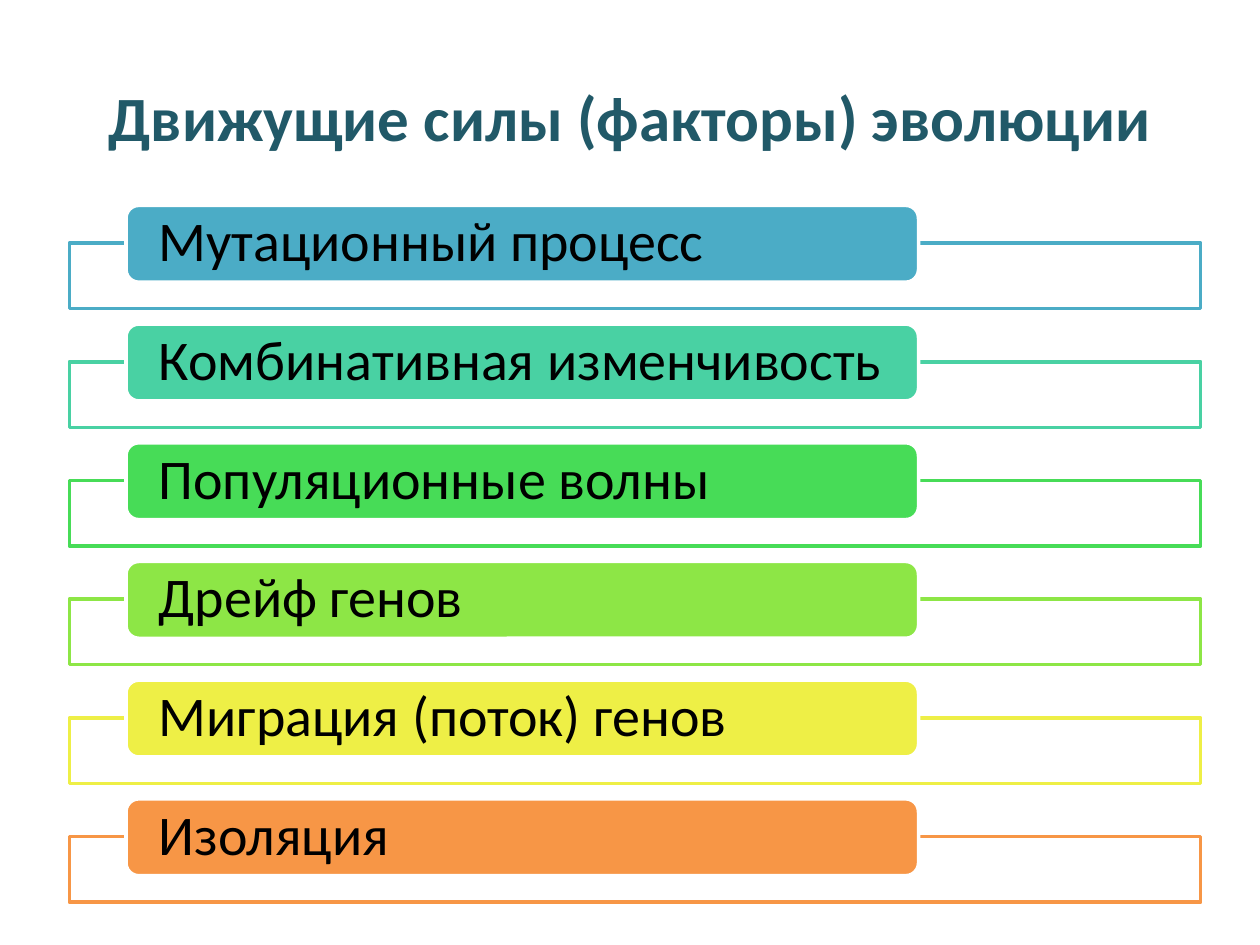
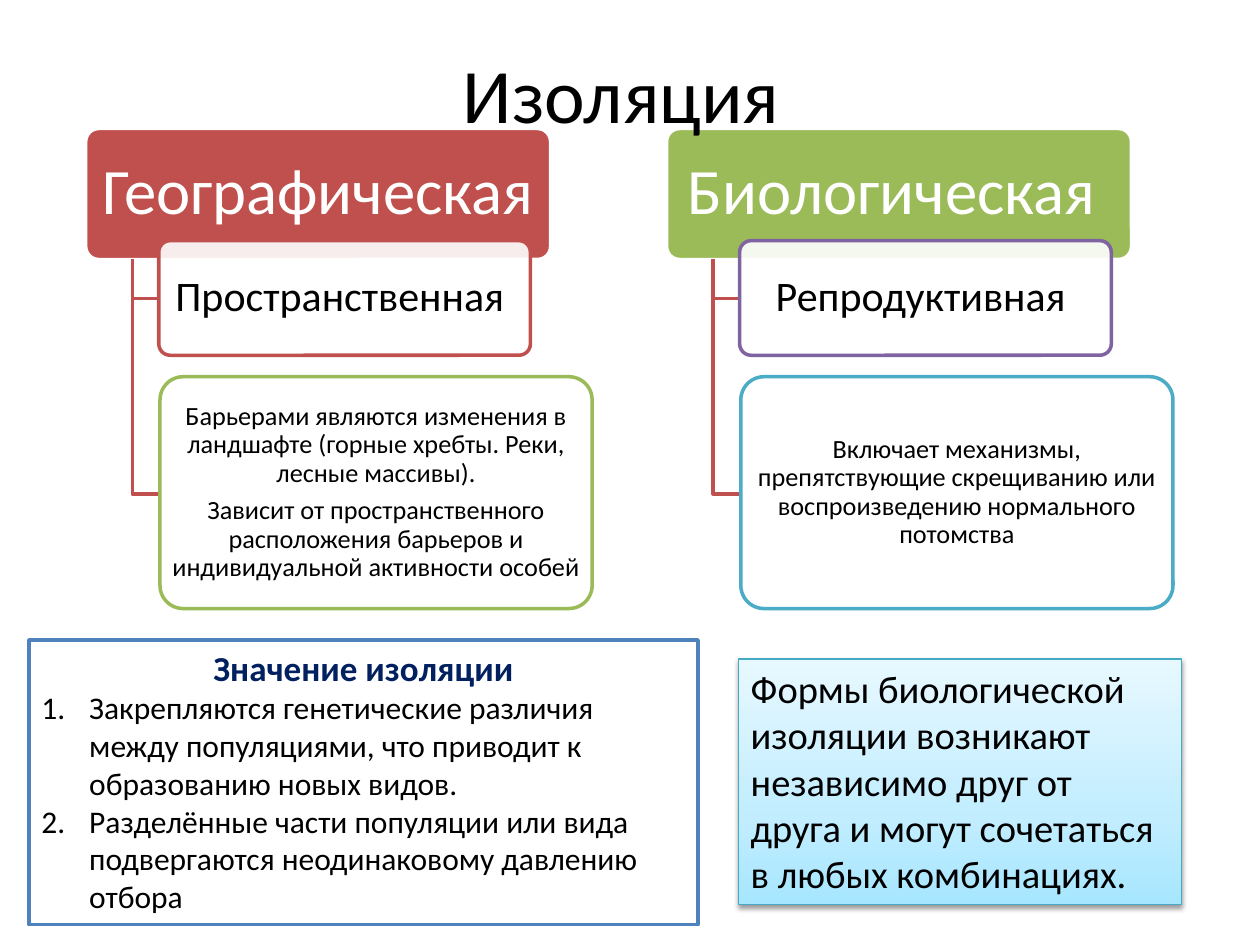
from dataclasses import dataclass

from lxml.etree import SubElement
from pptx import Presentation
from pptx.dml.color import RGBColor
from pptx.enum.shapes import MSO_SHAPE as Preset
from pptx.enum.text import MSO_ANCHOR as Anchor, PP_ALIGN as Align
from pptx.oxml.ns import qn
from pptx.util import Inches, Pt

FONT = "Calibri"
BLACK, WHITE = "000000", "FFFFFF"
RED, GREEN, PURPLE, AQUA = "C0504D", "9BBB59", "8064A2", "4BACC6"
TITLE_ONLY = 5


@dataclass
class Factor:
    label: str
    colour: str


@dataclass
class Panel:
    text: list[str]
    colour: str


@dataclass
class Branch:
    heading: Panel
    kind: Panel
    details: Panel


@dataclass
class Style:
    size: float
    colour: str = BLACK
    bold: bool = False
    align: Align = Align.LEFT
    tight: bool = False  # 90 % lines with a gap after each paragraph


FACTORS = [
    Factor("Мутационный процесс", AQUA),
    Factor("Комбинативная изменчивость", "49D1A3"),
    Factor("Популяционные волны", "47DC57"),
    Factor("Дрейф генов", "8DE646"),
    Factor("Миграция (поток) генов", "EEEF46"),
    Factor("Изоляция", "F79646"),
]

BRANCHES = [
    Branch(
        Panel(["Географическая "], RED),
        Panel(["Пространственная "], RED),
        Panel(["Барьерами являются изменения в ландшафте (горные хребты. Реки, "
               "лесные массивы).",
               "Зависит от пространственного расположения барьеров и "
               "индивидуальной активности особей"], GREEN),
    ),
    Branch(
        Panel(["Биологическая "], GREEN),
        Panel(["Репродуктивная "], PURPLE),
        Panel(["Включает механизмы, препятствующие скрещиванию или "
               "воспроизведению нормального потомства"], AQUA),
    ),
]

SIGNIFICANCE = [
    "Закрепляются генетические различия между популяциями, что приводит к "
    "образованию новых видов.",
    "Разделённые части популяции или вида подвергаются неодинаковому "
    "давлению отбора",
]
FORMS_NOTE = ("Формы биологической изоляции возникают независимо друг от друга "
              "и могут сочетаться в любых комбинациях.")
NOTE_GRADIENT = [(0, "A7E6FF"), (35, "C1EDFF"), (100, "E7F8FF")]


# Shared helpers
def rgb(colour: str) -> RGBColor:
    return RGBColor.from_string(colour)


def write(paragraph, text: str, style: Style) -> None:
    paragraph.alignment = style.align
    if style.tight:
        paragraph.line_spacing = 0.9
        paragraph.space_after = Pt(0.35 * style.size)
    run = paragraph.add_run()
    run.text = text
    run.font.name = FONT
    run.font.size = Pt(style.size)
    run.font.bold = style.bold
    run.font.color.rgb = rgb(style.colour)


def fill_text(shape, texts: list[str], style: Style, margins=(0.1, 0.05),
              anchor=Anchor.MIDDLE) -> None:
    frame = shape.text_frame
    frame.word_wrap = True
    frame.vertical_anchor = anchor
    frame.margin_left = frame.margin_right = Inches(margins[0])
    frame.margin_top = frame.margin_bottom = Inches(margins[1])
    for index, text in enumerate(texts):
        paragraph = frame.add_paragraph() if index else frame.paragraphs[0]
        write(paragraph, text, style)


def add_box(slide, preset, left: float, top: float, width: float, height: float,
            fill: str, line: str, line_width: float = 2, opacity: int = 100):
    box = slide.shapes.add_shape(preset, Inches(left), Inches(top),
                                 Inches(width), Inches(height))
    box.shadow.inherit = False
    box.fill.solid()
    box.fill.fore_color.rgb = rgb(fill)
    if opacity < 100:
        colour = box.element.spPr.find(qn("a:solidFill"))[0]
        SubElement(colour, qn("a:alpha"), val=str(opacity * 1000))
    box.line.color.rgb = rgb(line)
    box.line.width = Pt(line_width)
    return box


def add_titled_slide(prs, text: str, height: float, style: Style):
    slide = prs.slides.add_slide(prs.slide_layouts[TITLE_ONLY])
    title = slide.shapes.title
    title.left, title.top = Inches(0.5), Inches(0.3)
    title.width, title.height = Inches(9), Inches(height)
    fill_text(title, [text], style)
    return slide


# Slide 1: list of factors
def build_factors(prs) -> None:
    slide = add_titled_slide(prs, "Движущие силы (факторы) эволюции", 1.25,
                             Style(36, "215968", True, Align.CENTER))
    first_top, last_top = 1.63, 6.34
    pitch = (last_top - first_top) / (len(FACTORS) - 1)
    for row, factor in enumerate(FACTORS):
        top = first_top + row * pitch
        add_box(slide, Preset.RECTANGLE, 0.55, top + 0.3, 8.98, 0.52,
                WHITE, factor.colour, opacity=90)
        tag = add_box(slide, Preset.ROUNDED_RECTANGLE, 1, top, 6.29, 0.61,
                      factor.colour, WHITE)
        fill_text(tag, [factor.label], Style(32, tight=True), (0.23, 0))


# Slide 2: two branches and two notes
def add_elbow(slide, left: float, bottom: float) -> None:
    x, y = Inches(left), Inches(bottom)
    builder = slide.shapes.build_freeform(x, Inches(2.06))
    builder.add_line_segments([(x, y), (x + Inches(0.22), y)], close=False)
    elbow = builder.convert_to_shape()
    elbow.shadow.inherit = False
    elbow.fill.background()
    elbow.line.color.rgb = rgb(RED)
    elbow.line.width = Pt(2)


def add_panel(slide, panel: Panel, left: float, top: float, width: float,
              height: float, size: float, margins, solid: bool = False) -> None:
    fill, line = (panel.colour, WHITE) if solid else (WHITE, panel.colour)
    box = add_box(slide, Preset.ROUNDED_RECTANGLE, left, top, width, height,
                  fill, line, opacity=100 if solid else 90)
    box.adjustments[0] = 0.1
    style = Style(size, WHITE if solid else BLACK, align=Align.CENTER, tight=True)
    fill_text(box, panel.text, style, margins)


def add_branch(slide, branch: Branch, left: float) -> None:
    # Margins come on top of the inset of the rounded corners
    add_panel(slide, branch.heading, left, 1.02, 3.69, 1.04, 37, (0.07, 0.05), True)
    add_elbow(slide, left + 0.37, 2.37)
    add_panel(slide, branch.kind, left + 0.58, 1.91, 2.95, 0.91, 24, (0.05, 0.03))
    add_elbow(slide, left + 0.37, 3.92)
    add_panel(slide, branch.details, left + 0.59, 2.99, 3.43, 1.84, 15, (0.02, 0.02))


def add_forms_note(slide) -> None:
    note = add_box(slide, Preset.RECTANGLE, 5.86, 5.23, 3.52, 1.95,
                   WHITE, "46AAC5", 0.75)
    fill_text(note, [FORMS_NOTE], Style(22), anchor=Anchor.TOP)

    # Three-stop gradient, running upwards
    note.fill.gradient()
    note.fill.gradient_angle = 90
    properties = note.element.spPr
    stops = properties.find(qn("a:gradFill")).find(qn("a:gsLst"))
    for stop in list(stops):
        stops.remove(stop)
    for position, colour in NOTE_GRADIENT:
        stop = SubElement(stops, qn("a:gs"), pos=str(position * 1000))
        SubElement(stop, qn("a:srgbClr"), val=colour)

    # Soft shadow below
    shadow = SubElement(properties.find(qn("a:effectLst")), qn("a:outerShdw"),
                        blurRad=str(Pt(3.1)), dist=str(Pt(1.6)),
                        dir="5400000", rotWithShape="0")
    shade = SubElement(shadow, qn("a:srgbClr"), val=BLACK)
    SubElement(shade, qn("a:alpha"), val="38000")


def add_significance(slide) -> None:
    box = add_box(slide, Preset.RECTANGLE, 0.23, 5.08, 5.31, 2.26, WHITE, "4F81BD")
    fill_text(box, ["Значение изоляции"],
              Style(20, "002060", True, Align.CENTER), anchor=Anchor.TOP)
    for text in SIGNIFICANCE:
        paragraph = box.text_frame.add_paragraph()
        write(paragraph, text, Style(18))
        indent = Inches(0.38)
        properties = paragraph._p.get_or_add_pPr()
        properties.set("marL", str(indent))
        properties.set("indent", str(-indent))
        SubElement(properties, qn("a:buFont"), typeface="+mj-lt")
        SubElement(properties, qn("a:buAutoNum"), type="arabicPeriod")


def build_isolation(prs) -> None:
    slide = add_titled_slide(prs, "Изоляция ", 0.87, Style(44, align=Align.CENTER))
    for column, branch in enumerate(BRANCHES):
        add_branch(slide, branch, 0.68 + column * 4.61)
    # The title lies over the branch headings
    title = slide.shapes.title.element
    title.getparent().append(title)
    add_forms_note(slide)
    add_significance(slide)


def main() -> None:
    prs = Presentation()
    prs.slide_width, prs.slide_height = Inches(10), Inches(7.5)
    build_factors(prs)
    build_isolation(prs)
    prs.save("out.pptx")


if __name__ == "__main__":
    main()
